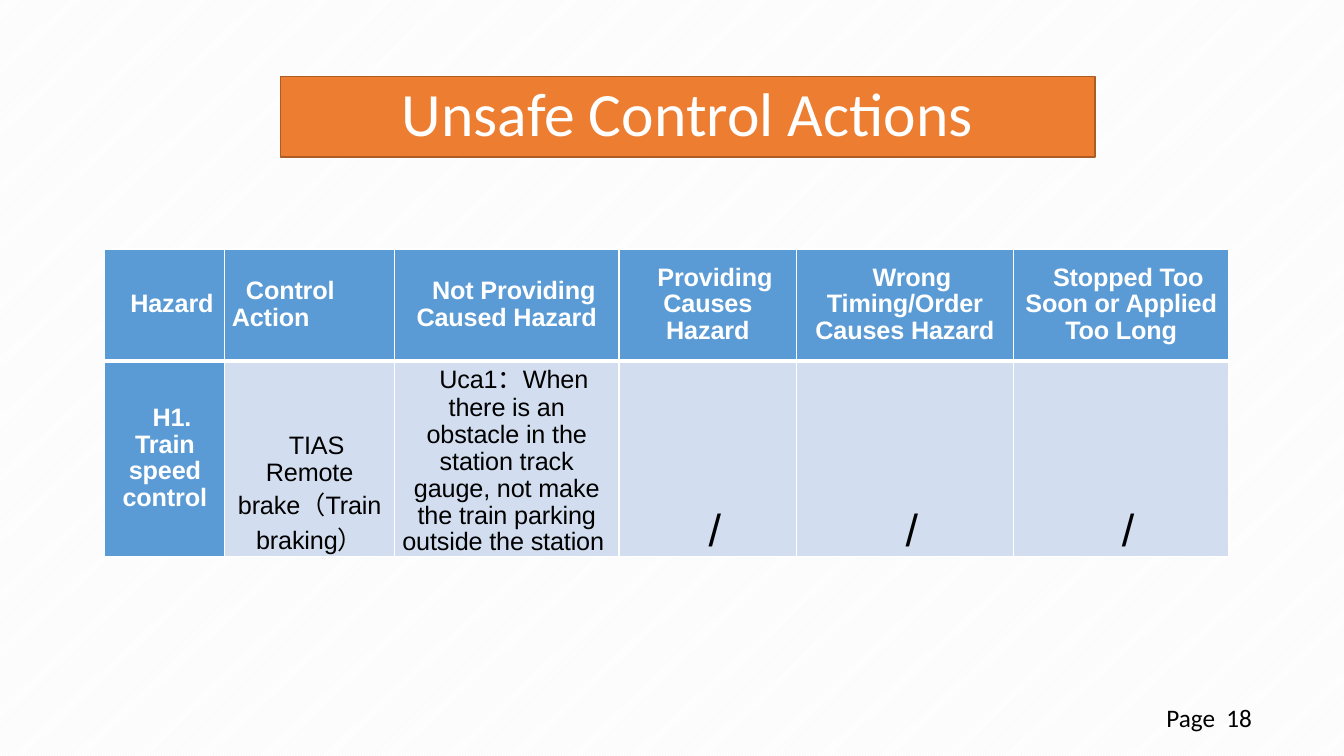
from lxml import etree
from pptx import Presentation, util as u
from pptx.dml.color import RGBColor
from pptx.enum import dml, text
from pptx.oxml.ns import qn

WIDTH, HEIGHT = 13.33, 7.5
BLACK, WHITE = "000000", "FFFFFF"
BLUE, PALE_BLUE = "5B9BD5", "D2DEEF"
ORANGE, BROWN = "ED7D31", "AF5C24"

COLUMNS = [1.19, 1.68, 2.23, 1.76, 2.15, 2.14]
ROWS = [1.11, 1.48]
HEADINGS = [
    "Hazard",
    "Control Action",
    "Not Providing Caused Hazard",
    "Providing Causes Hazard",
    "Wrong Timing/Order Causes Hazard",
    "Stopped Too Soon or Applied Too Long",
]
ACTIONS = [
    "H1. Train speed control",
    "TIAS Remote brake（Train braking）",
    "Uca1：When there is an obstacle in the station track gauge, "
    "not make the train parking outside the station ",
    "/",
    "/",
    "/",
]


def paint(color, value):
    color.rgb = RGBColor.from_string(value)


def place(left, top, width, height):
    """Turn shares of the slide's size into lengths."""
    return [u.Inches(round(share * side, 2)) for share, side in
            zip((left, top, width, height), (WIDTH, HEIGHT) * 2)]


def set_font(para, name, size, color, bold=False):
    para.font.name = name
    para.font.size = u.Pt(size)
    para.font.bold = bold
    paint(para.font.color, color)


def set_background(page):
    fill = page.background.fill
    fill.patterned()
    fill.pattern = dml.MSO_PATTERN.DARK_UPWARD_DIAGONAL
    paint(fill.fore_color, "F2F2F2")
    paint(fill.back_color, WHITE)


def add_title(page, words):
    title = page.shapes.title
    title.left, title.top, title.width, title.height = place(0.2086, 0.1013, 0.606, 0.1067)
    title.fill.solid()
    paint(title.fill.fore_color, ORANGE)
    paint(title.line.color, BROWN)
    title.line.width = u.Pt(1)
    frame = title.text_frame
    frame.text = words
    frame.auto_size = text.MSO_AUTO_SIZE.NONE
    frame.vertical_anchor = text.MSO_ANCHOR.MIDDLE
    para = frame.paragraphs[0]
    para.alignment = text.PP_ALIGN.CENTER
    para.line_spacing = 0.9
    set_font(para, "Calibri", 44, WHITE)


def add_page_number(page, words):
    box = page.shapes.add_textbox(*place(0.8605, 0.9227, 0.105, 0.0533))
    box.text_frame.word_wrap = True
    box.text_frame.text = words
    set_font(box.text_frame.paragraphs[0], "Calibri", 18, BLACK)


def add_borders(cell, bottom):
    props = cell._tc.get_or_add_tcPr()
    for side, points in {"lnL": 1, "lnR": 1, "lnT": 1, "lnB": bottom}.items():
        line = etree.SubElement(props, qn(f"a:{side}"), w=str(u.Pt(points)))
        solid = etree.SubElement(line, qn("a:solidFill"))
        etree.SubElement(solid, qn("a:srgbClr"), val=WHITE)


def fill_cell(cell, words, heading, align, anchor, bottom):
    add_borders(cell, bottom)
    cell.fill.solid()
    paint(cell.fill.fore_color, BLUE if heading else PALE_BLUE)
    cell.margin_left = cell.margin_right = u.Inches(0.07)
    cell.margin_top = cell.margin_bottom = 0
    cell.vertical_anchor = anchor
    cell.text_frame.text = words
    para = cell.text_frame.paragraphs[0]
    para.alignment = align
    para.line_spacing = 0.95
    para.space_after = u.Pt(6)
    para._p.get_or_add_pPr().set("indent", str(u.Inches(0.14)))
    set_font(para, "Arial", 32 if words == "/" else 18,
             WHITE if heading else BLACK, heading)
    para.runs[0].font._element.set("spc", "-10")


def add_hazard_table(page):
    left, top = place(0.078, 0.3293, 0, 0)[:2]
    frame = page.shapes.add_table(len(ROWS), len(COLUMNS), left, top,
                                  u.Inches(sum(COLUMNS)), u.Inches(sum(ROWS)))
    table = frame.table
    table.first_col = True
    for column, width in zip(table.columns, COLUMNS):
        column.width = u.Inches(width)
    for row, height in zip(table.rows, ROWS):
        row.height = u.Inches(height)
    for r, entries in enumerate([HEADINGS, ACTIONS]):
        for c, words in enumerate(entries):
            heading = r == 0 or c == 0
            left_aligned = words == "Control Action"
            fill_cell(table.cell(r, c), words, heading,
                      text.PP_ALIGN.LEFT if left_aligned else text.PP_ALIGN.CENTER,
                      text.MSO_ANCHOR.MIDDLE if heading else text.MSO_ANCHOR.BOTTOM,
                      bottom=3 if r == 0 else 1)


def main():
    deck = Presentation()
    deck.slide_width, deck.slide_height = u.Inches(WIDTH), u.Inches(HEIGHT)
    page = deck.slides.add_slide(deck.slide_layouts[5])

    # Backdrop and title
    set_background(page)
    add_title(page, "Unsafe Control Actions")

    # Hazard analysis and page number
    add_hazard_table(page)
    add_page_number(page, "Page  18")

    deck.save("out.pptx")


if __name__ == "__main__":
    main()
